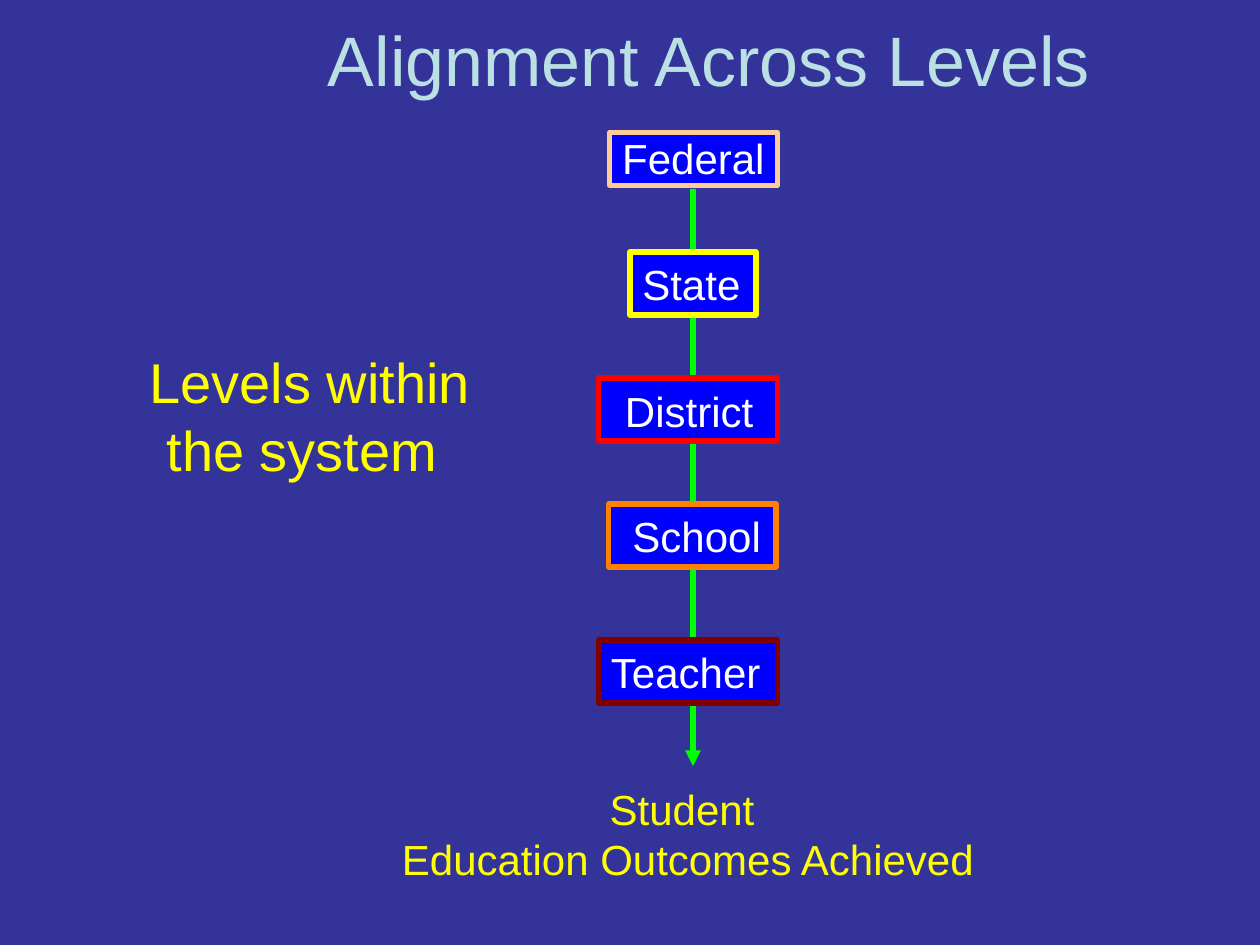
from lxml.etree import SubElement
from pptx import Presentation
from pptx.dml.color import RGBColor
from pptx.enum.shapes import MSO_CONNECTOR as Conn, MSO_SHAPE as Shape
from pptx.enum.text import MSO_ANCHOR as Anchor, MSO_AUTO_SIZE as Fit, PP_ALIGN as Align
from pptx.oxml.ns import qn
from pptx.util import Inches, Pt

NAVY = RGBColor(0x33, 0x33, 0x99)
BLUE = RGBColor(0x00, 0x00, 0xFF)
GREEN = RGBColor(0x00, 0xFF, 0x00)
WHITE = RGBColor(0xFF, 0xFF, 0xFF)
YELLOW = RGBColor(0xFF, 0xFF, 0x00)
PALE = RGBColor(0xBB, 0xE0, 0xE3)
PEACH = RGBColor(0xFF, 0xCC, 0x99)
RED = RGBColor(0xFF, 0x00, 0x00)
ORANGE = RGBColor(0xFF, 0x80, 0x00)
MAROON = RGBColor(0x80, 0x00, 0x00)

LEVELS = [
    ("Federal", 4.84, 1.05, 1.33, 0.42, PEACH, 0.1, 0),
    ("State", 5, 2, 1, 0.5, YELLOW, 0.1, 0.05),
    ("District", 4.75, 3, 1.42, 0.5, RED, 0.21, 0.06),
    ("School", 4.83, 4, 1.33, 0.5, ORANGE, 0.19, 0.05),
    ("Teacher", 4.75, 5.08, 1.42, 0.5, MAROON, 0.1, 0.05),
]


def write(frame, lines, size, color, align=Align.CENTER, anchor=Anchor.TOP):
    """Fill a text frame with one paragraph per line."""
    frame.word_wrap = True
    frame.auto_size = Fit.NONE
    frame.vertical_anchor = anchor
    frame.text = "\n".join(lines)
    for para in frame.paragraphs:
        para.alignment = align
        para.font.name = "Arial"
        para.font.size = Pt(size)
        para.font.color.rgb = color


def add_label(slide, lines, left, top, width, height, size, color):
    """Add a centred text box."""
    box = slide.shapes.add_textbox(*map(Inches, (left, top, width, height)))
    write(box.text_frame, lines, size, color)


def add_level(slide, name, left, top, width, height, edge, inset, drop):
    """Add one outlined box of the chain with its name."""
    box = slide.shapes.add_shape(
        Shape.RECTANGLE, *map(Inches, (left, top, width, height)))
    box.shadow.inherit = False
    box.fill.solid()
    box.fill.fore_color.rgb = BLUE
    box.line.color.rgb = edge
    box.line.width = Pt(3)
    frame = box.text_frame
    write(frame, [name], 24, WHITE, Align.LEFT)
    frame.word_wrap = False
    frame.margin_left = Inches(inset)
    frame.margin_right = frame.margin_bottom = 0
    frame.margin_top = Inches(drop)


def add_arrow(slide, x, top, end):
    """Add the vertical arrow that runs through the levels."""
    arrow = slide.shapes.add_connector(
        Conn.STRAIGHT, *map(Inches, (x, top, x, end)))
    arrow.line.color.rgb = GREEN
    arrow.line.width = Pt(3)
    SubElement(arrow.line._get_or_add_ln(), qn("a:tailEnd"), type="triangle")
    SubElement(arrow._element.spPr, qn("a:effectLst"))


def set_title(slide, text, left, top, width, height):
    """Place and format the title placeholder."""
    title = slide.shapes.title
    title.left, title.top, title.width, title.height = map(
        Inches, (left, top, width, height))
    write(title.text_frame, [text], 32, YELLOW, anchor=Anchor.MIDDLE)


def main():
    """Build the slide and save it."""
    deck = Presentation()
    deck.slide_width, deck.slide_height = Inches(10), Inches(7.5)
    slide = deck.slides.add_slide(deck.slide_layouts[5])
    slide.background.fill.solid()
    slide.background.fill.fore_color.rgb = NAVY
    set_title(slide, "Levels within the system ", 0.75, 2.67, 3.42, 1.25)
    add_arrow(slide, 5.5, 1.5, 6.08)
    for level in LEVELS:
        add_level(slide, *level)
    add_label(slide, ["Student ", "Education Outcomes Achieved"],
              3.08, 6.17, 4.76, 0.9, 24, YELLOW)
    add_label(slide, ["Alignment Across Levels"],
              1.67, 0.08, 7.91, 0.77, 40, PALE)
    deck.save("out.pptx")


if __name__ == "__main__":
    main()
